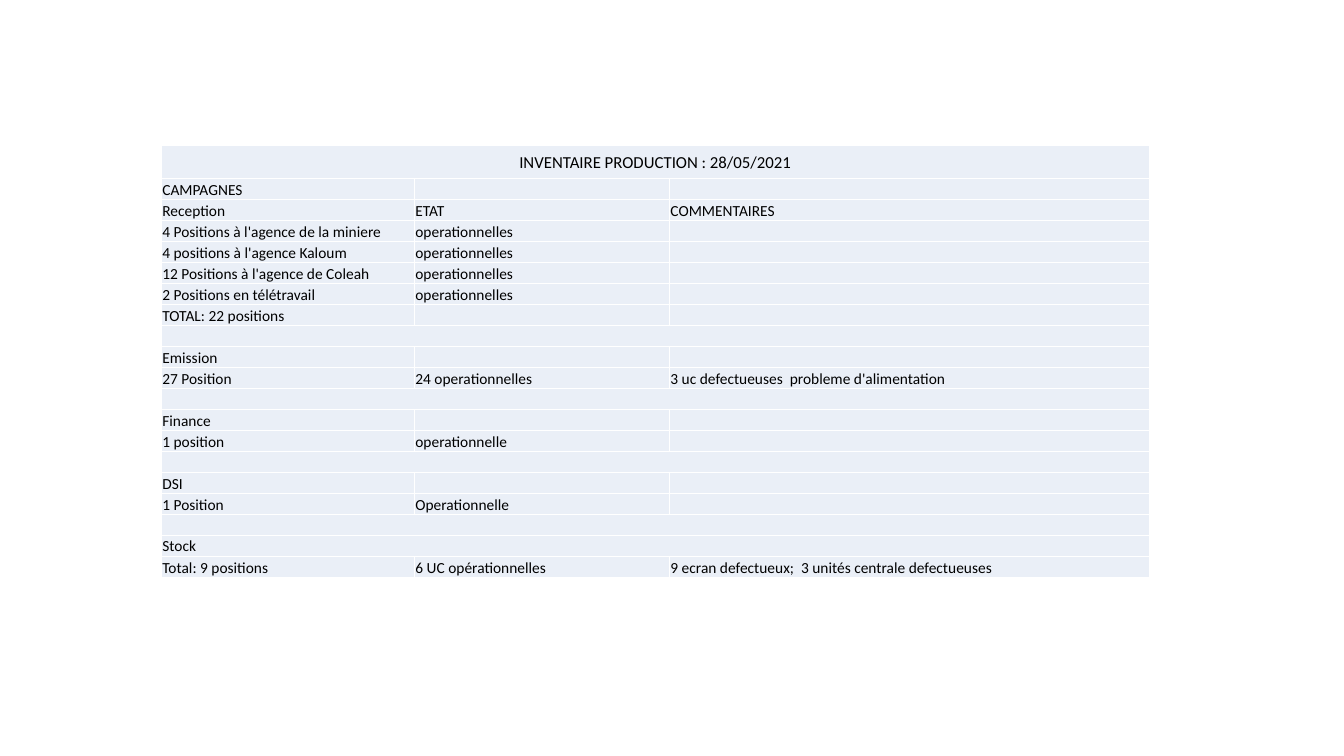
from lxml import etree
from pptx import Presentation
from pptx.dml.color import RGBColor
from pptx.enum import text
from pptx.oxml.ns import qn
from pptx.util import Inches, Pt

FONT = "Calibri"
INK, CELL_FILL, RULE = "000000", "EAEFF7", "FFFFFF"
TITLE_HEIGHT = 0.33
COLUMN_WIDTHS = (2.51, 2.53, 4.76)

# A row with a single entry spans the whole table
ROWS = [
    ("INVENTAIRE PRODUCTION : 28/05/2021",),
    ("CAMPAGNES", "", ""),
    ("Reception", "ETAT", "COMMENTAIRES"),
    ("4 Positions à l'agence de la miniere", "operationnelles", ""),
    ("4 positions à l'agence Kaloum", "operationnelles", ""),
    ("12 Positions à l'agence de Coleah", "operationnelles", ""),
    ("2 Positions en télétravail", "operationnelles", ""),
    ("TOTAL: 22 positions", "", ""),
    ("",),
    ("Emission", "", ""),
    ("27 Position", "24 operationnelles", "3 uc defectueuses  probleme d'alimentation"),
    ("",),
    ("Finance", "", ""),
    ("1 position", "operationnelle", ""),
    ("",),
    ("DSI", "", ""),
    ("1 Position", "Operationnelle", ""),
    ("",),
    ("Stock",),
    ("Total: 9 positions", "6 UC opérationnelles", "9 ecran defectueux;  3 unités centrale defectueuses"),
]


def color(value):
    return RGBColor.from_string(value)


def add_borders(cell, value, width):
    properties = cell._tc.get_or_add_tcPr()
    for side in ("lnL", "lnR", "lnT", "lnB"):
        line = etree.SubElement(properties, qn(f"a:{side}"), w=str(Pt(width)))
        solid = etree.SubElement(line, qn("a:solidFill"))
        etree.SubElement(solid, qn("a:srgbClr"), val=value)


def write_cell(cell, words, size=11, align=text.PP_ALIGN.LEFT, anchor=text.MSO_ANCHOR.BOTTOM):
    cell.margin_left = cell.margin_right = cell.margin_top = Inches(0.01)
    cell.margin_bottom = 0
    cell.vertical_anchor = anchor
    add_borders(cell, RULE, 1)
    cell.fill.solid()
    cell.fill.fore_color.rgb = color(CELL_FILL)
    para = cell.text_frame.paragraphs[0]
    para.alignment = align
    if words:
        span = para.add_run()
        span.text = words
        span.font.name, span.font.size = FONT, Pt(size)
        span.font.color.rgb = color(INK)
    else:
        # The end mark keeps empty rows as low as the others
        etree.SubElement(para._p, qn("a:endParaRPr"), sz=str(size * 100))


def add_inventory(page, left, top, width, height):
    frame = page.shapes.add_table(len(ROWS), len(COLUMN_WIDTHS), Inches(left), Inches(top),
                                  Inches(width), Inches(height))
    table = frame.table
    table.first_row = table.horz_banding = False
    for column, share in zip(table.columns, COLUMN_WIDTHS):
        column.width = Inches(width * share / sum(COLUMN_WIDTHS))

    row_height = (height - TITLE_HEIGHT) / (len(ROWS) - 1)
    for index, entries in enumerate(ROWS):
        table.rows[index].height = Inches(row_height if index else TITLE_HEIGHT)
        style = {}
        if len(entries) == 1:
            style["anchor"] = text.MSO_ANCHOR.MIDDLE
        if index == 0:
            style.update(size=12, align=text.PP_ALIGN.CENTER)
        for position in range(len(COLUMN_WIDTHS)):
            words = entries[position] if position < len(entries) else ""
            write_cell(table.cell(index, position), words, **style)
        if len(entries) == 1:
            table.cell(index, 0).merge(table.cell(index, len(COLUMN_WIDTHS) - 1))


def main():
    deck = Presentation()
    deck.slide_width, deck.slide_height = Inches(13.33), Inches(7.5)
    page = deck.slides.add_slide(deck.slide_layouts[6])
    add_inventory(page, 1.6, 1.44, 9.8, 4.29)
    deck.save("out.pptx")


if __name__ == "__main__":
    main()
